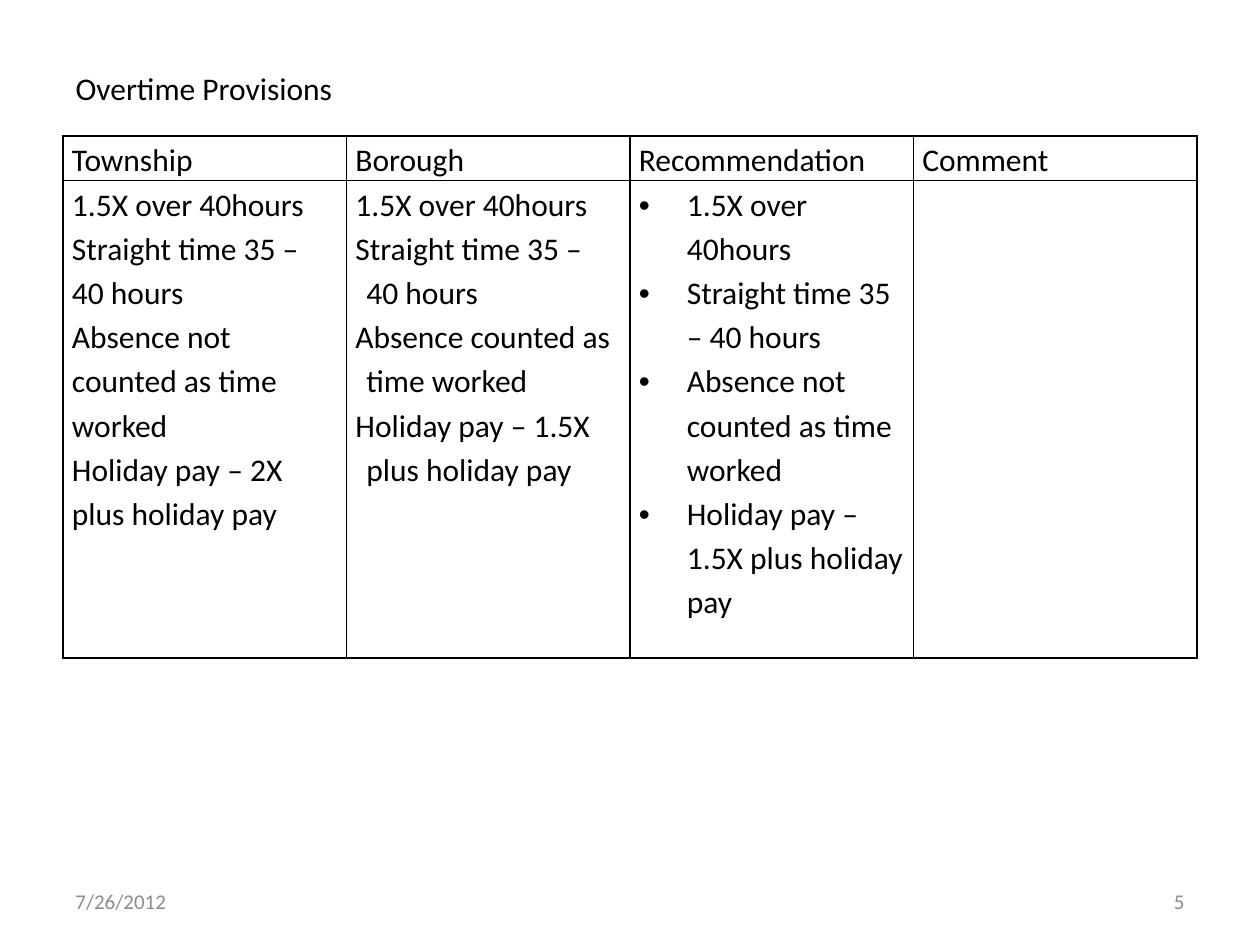
import dataclasses

import pptx
import pptx.dml.color
import pptx.enum.text
import pptx.oxml
import pptx.oxml.ns
import pptx.util

PX = 914400 // 126
ALIGN = pptx.enum.text.PP_ALIGN
ANCHOR = pptx.enum.text.MSO_ANCHOR


@dataclasses.dataclass(frozen=True)
class Theme:
    font: str = "Calibri"
    ink: str = "000000"
    muted: str = "8C8C8C"
    body: int = 18
    footer: int = 12
    line_spacing: float = 1.15
    border: float = 1


def px(n):
    return pptx.util.Emu(n * PX)


def xml(parent, text):
    """Append an element, written with the a: prefix, to parent."""
    ns = pptx.oxml.ns.nsdecls("a")
    parent.append(pptx.oxml.parse_xml(text.replace(" ", f" {ns} ", 1)))


class Deck:
    def __init__(self, theme, width, height):
        self.theme = theme
        self.prs = pptx.Presentation()
        self.prs.slide_width = px(width)
        self.prs.slide_height = px(height)
        self.s = self.prs.slides.add_slide(self.prs.slide_layouts[5])

    def run(self, p, text, size, color):
        r = p.add_run()
        r.text = text
        r.font.name = self.theme.font
        r.font.size = pptx.util.Pt(size)
        r.font.color.rgb = pptx.dml.color.RGBColor.from_string(color)

    def title(self, text, x, y, w, h):
        sp = self.s.shapes.title
        sp.left, sp.top, sp.width, sp.height = map(px, (x, y, w, h))
        tf = sp.text_frame
        tf.word_wrap = False
        tf.auto_size = pptx.enum.text.MSO_AUTO_SIZE.NONE
        tf.vertical_anchor = ANCHOR.TOP
        p = tf.paragraphs[0]
        p.alignment = ALIGN.LEFT
        self.run(p, text, self.theme.body, self.theme.ink)

    def footer(self, text, x, y, w, h, align):
        tf = self.s.shapes.add_textbox(*map(px, (x, y, w, h))).text_frame
        tf.word_wrap = True
        tf.vertical_anchor = ANCHOR.MIDDLE
        p = tf.paragraphs[0]
        p.alignment = align
        self.run(p, text, self.theme.footer, self.theme.muted)

    def cell(self, cell, lines, hang=0, bullet=False):
        """Fill a bordered cell with one paragraph a line, hanging by hang px."""
        cell.margin_left = cell.margin_right = px(9)
        cell.margin_top = cell.margin_bottom = 0
        tf = cell.text_frame
        for i, line in enumerate(lines):
            p = tf.add_paragraph() if i else tf.paragraphs[0]
            p.line_spacing = self.theme.line_spacing
            pPr = p._p.get_or_add_pPr()
            if hang:
                pPr.set("marL", str(px(hang)))
                pPr.set("indent", str(-px(hang)))
            if bullet:
                xml(pPr, '<a:buFont typeface="Arial"/>')
                xml(pPr, '<a:buChar char="•"/>')
            self.run(p, line, self.theme.body, self.theme.ink)
        tcPr = cell._tc.get_or_add_tcPr()
        for side in "LRTB":
            xml(tcPr, f'<a:ln{side} w="{pptx.util.Pt(self.theme.border)}">'
                      f'<a:solidFill><a:srgbClr val="{self.theme.ink}"/>'
                      f'</a:solidFill></a:ln{side}>')
        cell.fill.background()

    def table(self, columns, x, y, w, row_heights):
        """Draw columns given as (heading, lines, hang, bullet)."""
        frame = self.s.shapes.add_table(
            len(row_heights), len(columns),
            *map(px, (x, y, w, sum(row_heights))))
        table = frame.table
        table.first_row = table.horz_banding = False
        for row, height in zip(table.rows, row_heights):
            row.height = px(height)
        for c, (heading, lines, hang, bullet) in enumerate(columns):
            self.cell(table.cell(0, c), [heading])
            self.cell(table.cell(1, c), lines, hang, bullet)


def provisions(absence, holiday):
    return ["1.5X over 40hours", "Straight time 35 – 40 hours",
            f"Absence {absence} as time worked",
            f"Holiday pay – {holiday} plus holiday pay"]


def main():
    deck = Deck(Theme(), 1260, 945)
    deck.title("Overtime Provisions", 63, 63, 285, 50)
    deck.table([
        ("Township", provisions("not counted", "2X"), 0, False),
        ("Borough", provisions("counted", "1.5X"), 11, False),
        ("Recommendation", provisions("not counted", "1.5X"), 48, True),
        ("Comment", [], 0, False),
    ], 63, 136, 1134, [44, 478])
    deck.footer("7/26/2012", 63, 876, 294, 50, ALIGN.LEFT)
    deck.footer("5", 903, 876, 294, 50, ALIGN.RIGHT)
    deck.prs.save("out.pptx")


if __name__ == "__main__":
    main()
